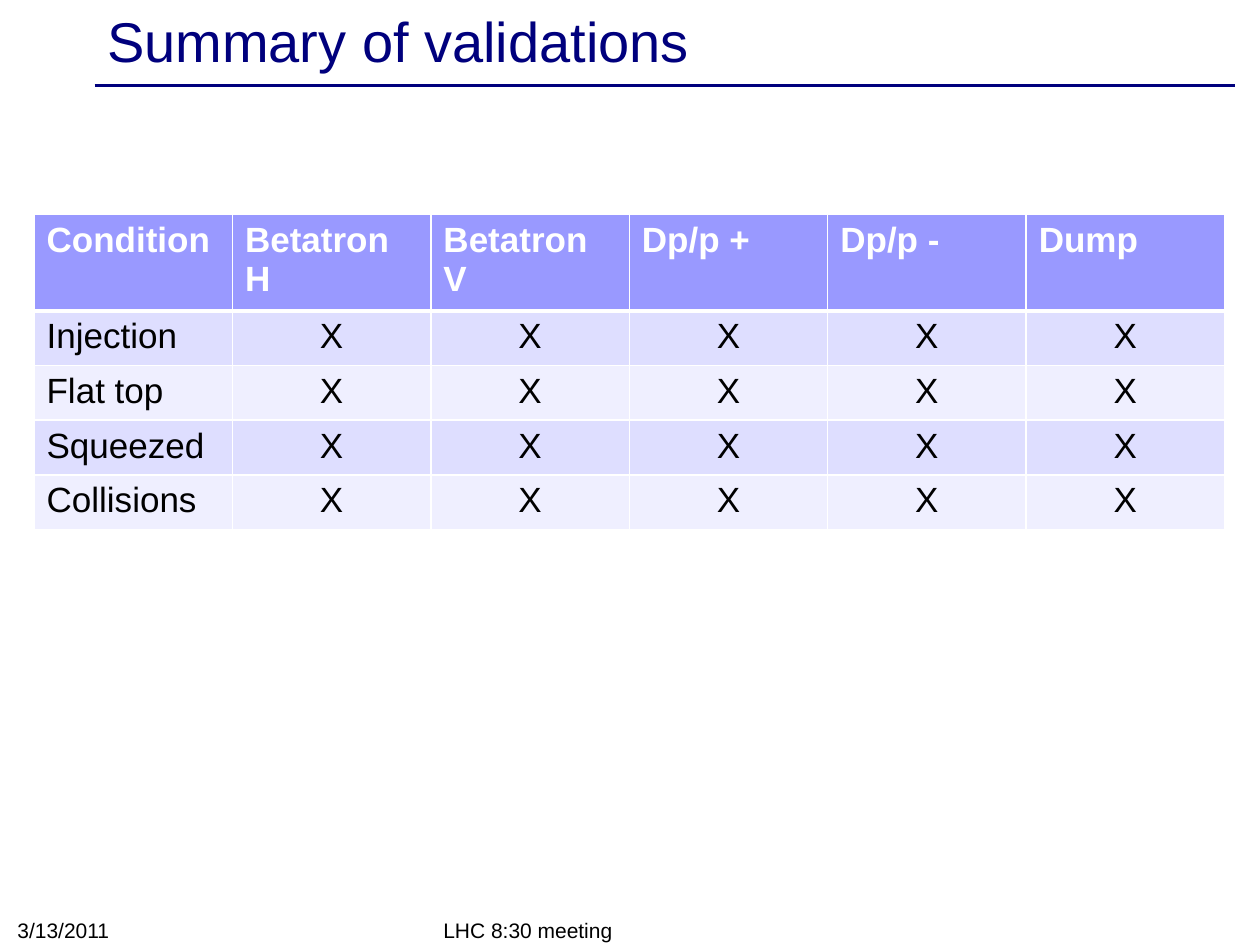
from dataclasses import dataclass

from lxml.etree import SubElement
from pptx import Presentation
from pptx.dml.color import RGBColor as RGB
from pptx.enum.shapes import MSO_CONNECTOR as Link
from pptx.enum.text import MSO_ANCHOR as Anchor, MSO_AUTO_SIZE as Fit, PP_ALIGN as Align
from pptx.oxml.ns import qn
from pptx.util import Inches, Pt


@dataclass(frozen=True)
class Theme:
    font: str = "Arial"
    navy: str = "00007D"
    black: str = "000000"
    white: str = "FFFFFF"
    head: str = "9999FF"
    bands: tuple = ("DEDEFF", "EFEFFF")
    title: int = 32
    body: int = 20
    small: int = 12


THEME = Theme()
HEADS = ["Condition", "Betatron H", "Betatron V", "Dp/p +", "Dp/p -", "Dump"]
STATES = ["Injection", "Flat top", "Squeezed", "Collisions"]


def write(frame, text, size, color, align=Align.LEFT, bold=False):
    frame.text = text
    para = frame.paragraphs[0]
    para.alignment = align
    font = para.font
    font.name, font.size, font.bold = THEME.font, Pt(size), bold
    font.color.rgb = RGB.from_string(color)


def place(shape, left, top, width, height):
    shape.left, shape.top = Inches(left), Inches(top)
    shape.width, shape.height = Inches(width), Inches(height)


def add_title(slide, text):
    title = slide.shapes.title
    place(title, 0.75, 0.03, 9, 0.57)
    frame = title.text_frame
    write(frame, text, THEME.title, THEME.navy)
    frame.auto_size = Fit.NONE
    frame.vertical_anchor = Anchor.MIDDLE


def add_rule(slide):
    y = Inches(0.68)
    rule = slide.shapes.add_connector(Link.STRAIGHT, Inches(0.75), y, Inches(9.8), y)
    rule.line.color.rgb = RGB.from_string(THEME.navy)
    rule.line.width = Pt(2)
    SubElement(rule.element.spPr, qn("a:effectLst"))


def add_note(slide, text, *box):
    note = slide.shapes.add_textbox(*map(Inches, box))
    frame = note.text_frame
    frame.word_wrap = True
    frame.vertical_anchor = Anchor.BOTTOM
    write(frame, text, THEME.small, THEME.black)


def add_edges(cell, top, bottom):
    """Draw white cell borders; top and bottom are widths in points."""
    props = cell._tc.get_or_add_tcPr()
    for side, width in (("L", 1), ("R", 1), ("T", top), ("B", bottom)):
        edge = SubElement(props, qn(f"a:ln{side}"), w=str(Pt(width)))
        fill = SubElement(edge, qn("a:solidFill"))
        SubElement(fill, qn("a:srgbClr"), val=THEME.white)


def add_grid(slide, rows):
    box = map(Inches, (0.27, 1.7, 9.45, 2.05))
    table = slide.shapes.add_table(len(rows), len(rows[0]), *box).table
    for r, row in enumerate(rows):
        table.rows[r].height = Inches(0.41)
        head = r == 0
        shade = THEME.head if head else THEME.bands[(r - 1) % 2]
        color = THEME.white if head else THEME.black
        for c, text in enumerate(row):
            cell = table.cell(r, c)
            align = Align.LEFT if head or c == 0 else Align.CENTER
            write(cell.text_frame, text, THEME.body, color, align, head)
            add_edges(cell, 3 if r == 1 else 1, 3 if head else 1)
            cell.fill.solid()
            cell.fill.fore_color.rgb = RGB.from_string(shade)


def main():
    deck = Presentation()
    deck.slide_width, deck.slide_height = Inches(10), Inches(7.5)
    slide = deck.slides.add_slide(deck.slide_layouts[5])
    add_rule(slide)
    add_title(slide, "Summary of validations")
    add_note(slide, "LHC 8:30 meeting", 3.42, 7.25, 3.17, 0.28)
    add_note(slide, "3/13/2011", 0.04, 7.24, 2.33, 0.29)
    marks = ["X"] * (len(HEADS) - 1)
    add_grid(slide, [HEADS] + [[state] + marks for state in STATES])
    deck.save("out.pptx")


if __name__ == "__main__":
    main()
